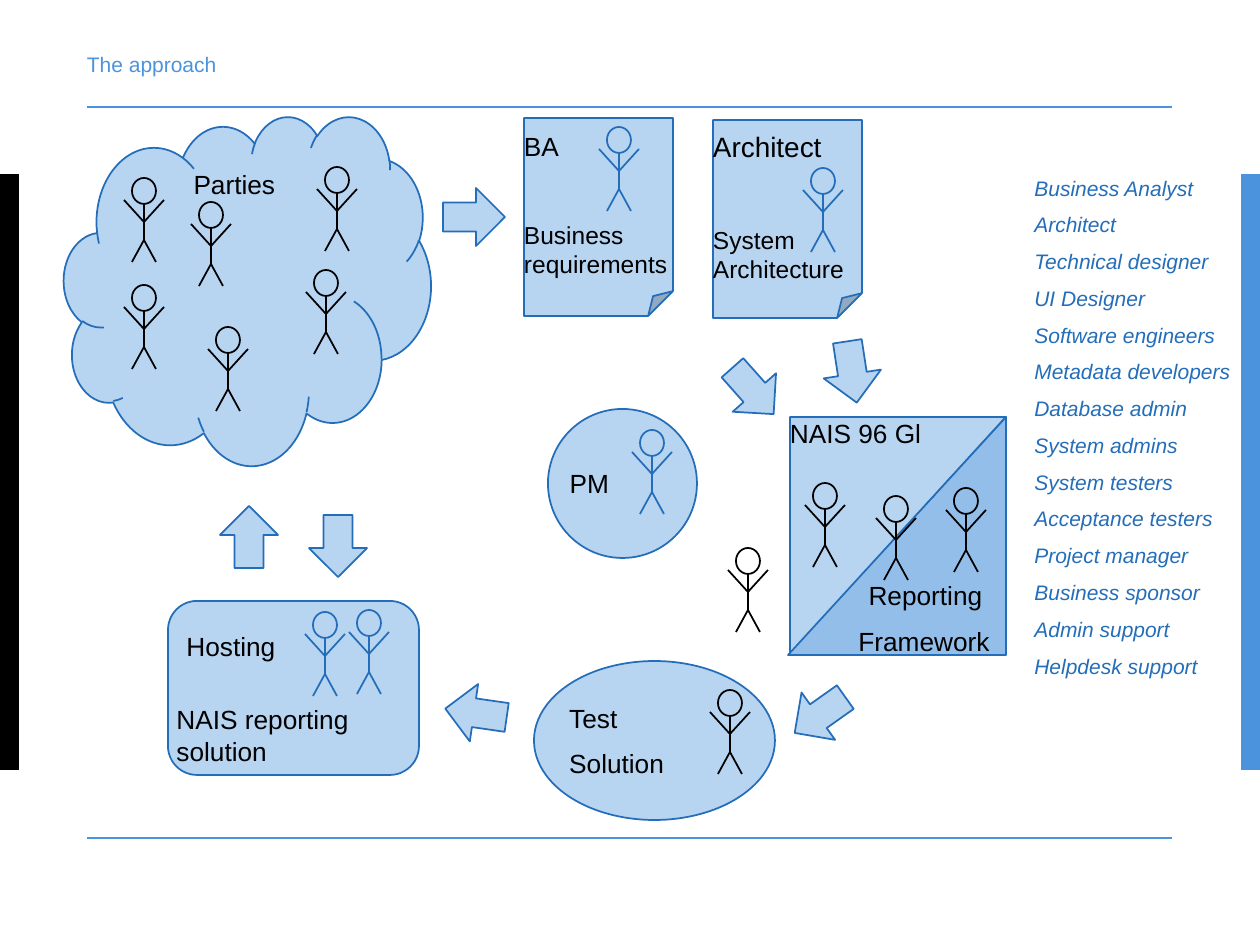
from lxml import etree
from pptx import Presentation
from pptx.dml.color import RGBColor
from pptx.enum.shapes import MSO_CONNECTOR, MSO_SHAPE
from pptx.enum.text import MSO_ANCHOR, PP_ALIGN
from pptx.oxml.ns import qn
from pptx.util import Emu, Pt

RECT, ROUND, OVAL = MSO_SHAPE.RECTANGLE, MSO_SHAPE.ROUNDED_RECTANGLE, MSO_SHAPE.OVAL
CLOUD, FOLDED = MSO_SHAPE.CLOUD, MSO_SHAPE.FOLDED_CORNER
HALF, UP = MSO_SHAPE.HALF_FRAME, MSO_SHAPE.UP_ARROW
STRAIGHT = MSO_CONNECTOR.STRAIGHT
TOP, MIDDLE, BOTTOM = MSO_ANCHOR.TOP, MSO_ANCHOR.MIDDLE, MSO_ANCHOR.BOTTOM
LEFT, CENTER, RIGHT = PP_ALIGN.LEFT, PP_ALIGN.CENTER, PP_ALIGN.RIGHT

BLACK, BLUE, DARK, PALE, MID = "000000", "4B93DC", "246EB9", "B7D4F1", "93BEEA"
GAP = 0.55
ROLES = ["Business Analyst", "Architect", "Technical designer", "UI Designer",
         "Software engineers", "Metadata developers", "Database admin",
         "System admins", "System testers", "Acceptance testers",
         "Project manager", "Business sponsor", "Admin support", "Helpdesk support"]


def px(n):
    return Emu(round(n * 914400 / 126))


def rgb(value):
    return RGBColor.from_string(value)


def apply(obj, values):
    for name, value in values.items():
        setattr(obj, name, value)


def write(sp, lines, anchor=MIDDLE, align=LEFT, inset=(0, 0), wrap=True, color=BLACK, italic=False):
    tf = sp.text_frame
    dx, dy = map(px, inset)
    apply(tf, {"word_wrap": wrap, "vertical_anchor": anchor, "margin_left": dx,
               "margin_right": dx, "margin_top": dy, "margin_bottom": dy})
    for i, (text, size, before) in enumerate(lines):
        p = tf.paragraphs[0] if i == 0 else tf.add_paragraph()
        p.alignment = align
        if i:
            p.space_before = Pt(before)
        r = p.add_run()
        r.text = text
        apply(r.font, {"name": "Arial", "size": Pt(size), "italic": italic})
        r.font.color.rgb = rgb(color)


def even(texts, size):
    return [(text, size, size * GAP) for text in texts]


def shape(parent, kind, box, fill=PALE, line=DARK, adj=(), rotation=0):
    sp = parent.shapes.add_shape(kind, *map(px, box))
    sp.shadow.inherit = False
    sp.rotation = rotation
    for i, value in enumerate(adj):
        sp.adjustments[i] = value
    if fill:
        sp.fill.solid()
        sp.fill.fore_color.rgb = rgb(fill)
    else:
        sp.fill.background()
    if line:
        sp.line.color.rgb = rgb(line)
        sp.line.width = Pt(1)
    else:
        sp.line.fill.background()
    return sp


def textbox(s, box, lines, **options):
    write(s.shapes.add_textbox(*map(px, box)), lines, **options)


def connector(parent, start, end, color):
    c = parent.shapes.add_connector(STRAIGHT, *map(px, start + end))
    c.line.color.rgb = rgb(color)
    c.line.width = Pt(1)
    etree.SubElement(c._element.spPr, qn("a:effectLst"))


def person(s, x, y, color=BLACK):
    group = s.shapes.add_group_shape()
    shape(group, OVAL, (x + 8, y, 24, 26), None, color)
    limbs = [((20, 26), (20, 62)), ((20, 62), (32, 84)), ((20, 62), (8, 84)),
             ((20, 44), (0, 22)), ((20, 44), (40, 22))]
    for (x1, y1), (x2, y2) in limbs:
        connector(group, (x + x1, y + y1), (x + x2, y + y2), color)


def people(s, box, offsets, color=BLACK):
    for dx, dy in offsets:
        person(s, box[0] + dx, box[1] + dy, color)


def frame(s, box):
    x, y, w, h = box
    for bar_x in (0, 1241):
        shape(s, RECT, (bar_x, 174, 19, 596), BLUE if bar_x else BLACK, None)
    for line_y in (y, y + h):
        connector(s, (x, line_y), (x + w, line_y), BLUE)
    textbox(s, (x, y - 64, w, 43), [("The approach", 12, 0)], color=BLUE)


def framework(s, box):
    x, y, w, h = box
    sp = shape(s, HALF, (x + 2, y, w - 2, h - 1), adj=(0.333, 0.745))
    write(sp, [("NAIS 96 Gl", 15, 0)], anchor=TOP)
    shape(s, HALF, box, MID, adj=(0.725, 0.333), rotation=180)
    textbox(s, (x + 55, y + 156, 159, 92), even(["Reporting ", "Framework"], 15),
            anchor=TOP, align=RIGHT, inset=(12.6, 6.3), wrap=False)
    people(s, box, [(17, 66), (158, 71), (88, 79)])


def document(s, box, heading, body, figure):
    write(shape(s, FOLDED, box), [heading, body])
    people(s, box, [figure], DARK)


def parties(s, box):
    write(shape(s, CLOUD, box), [("Parties", 15, 0)], anchor=TOP, align=CENTER)
    people(s, box, [(253, 51), (127, 86), (60, 169), (144, 211), (242, 154), (60, 62)])


def stage(s, box, texts, figure, color):
    write(shape(s, OVAL, box), even(texts, 15))
    people(s, box, [figure], color)


def hosting(s, box):
    x, y, w, h = box
    write(shape(s, ROUND, box), [("NAIS reporting solution", 15, 0)], anchor=BOTTOM)
    people(s, box, [(181, 9), (137, 11)], DARK)
    textbox(s, (x + 6, y + 23, 242, 44), [("Hosting", 15, 0)], anchor=TOP, inset=(12.6, 6.3))


def roles(s, box):
    textbox(s, box, even(ROLES, 12), anchor=TOP, inset=(12.6, 6.3), wrap=False,
            color=DARK, italic=True)


def arrows(s):
    for x, y, angle in [(724, 360, 138.4), (823, 341, 171.3), (791, 684, 234.7),
                        (447, 682, 278.2), (220, 506, 0), (309, 515, 180), (445, 186, 90)]:
        shape(s, UP, (x, y, 58, 62), rotation=angle)


def main():
    prs = Presentation()
    prs.slide_width, prs.slide_height = px(1260), px(945)
    s = prs.slides.add_slide(prs.slide_layouts[6])
    frame(s, (87, 107, 1085, 731))
    framework(s, (788, 417, 218, 238))
    person(s, 728, 548)
    document(s, (713, 120, 149, 198), ("Architect", 16, 0), ("System Architecture", 14, 35), (90, 48))
    document(s, (524, 118, 149, 198), ("BA", 15, 0), ("Business requirements", 14, 33), (75, 9))
    stage(s, (534, 661, 241, 159), ["Test", "Solution"], (176, 29), BLACK)
    parties(s, (64, 116, 367, 349))
    stage(s, (548, 409, 149, 149), ["PM"], (84, 21), DARK)
    hosting(s, (168, 601, 251, 174))
    arrows(s)
    roles(s, (1022, 169, 223, 582))
    prs.save("out.pptx")


if __name__ == "__main__":
    main()
